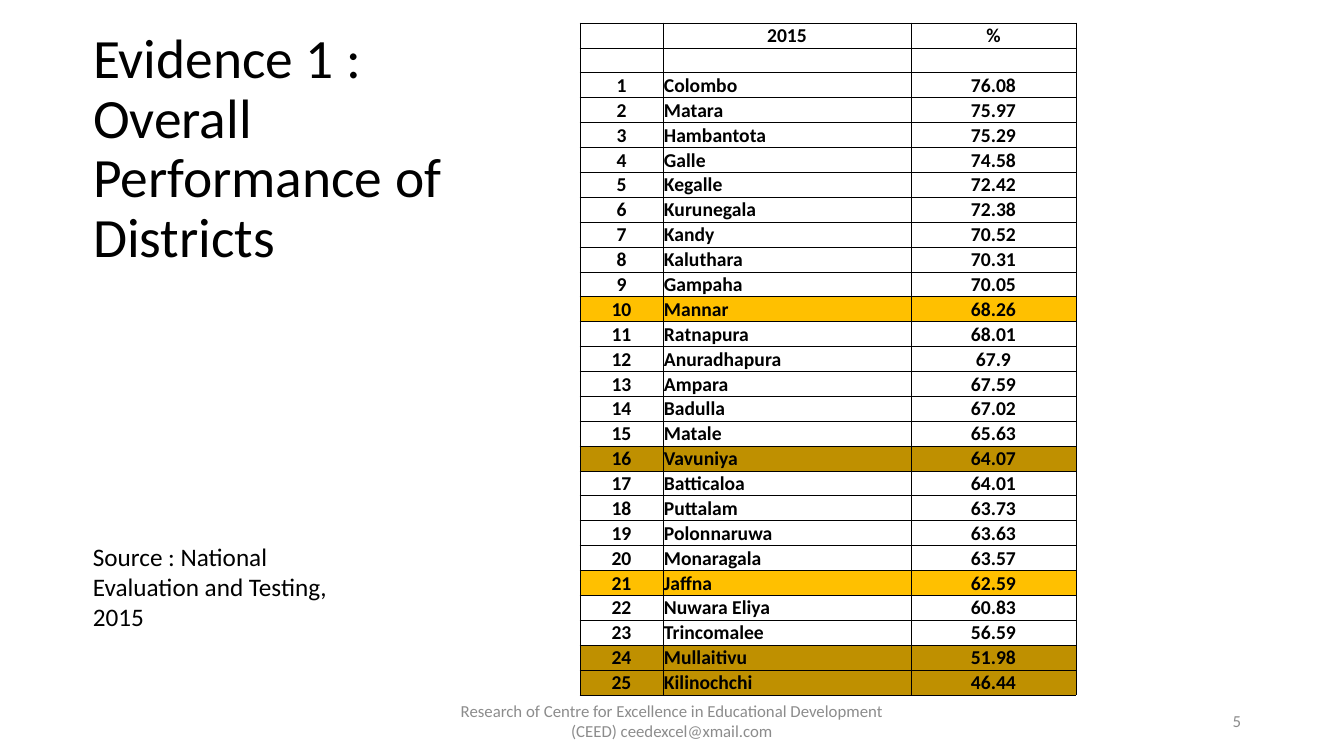
from lxml import etree
from pptx import Presentation
from pptx import util as u
from pptx.dml.color import RGBColor
from pptx.enum import text
from pptx.oxml import ns

BLACK = RGBColor(0x00, 0x00, 0x00)
WHITE = RGBColor(0xFF, 0xFF, 0xFF)
GRAY = RGBColor(0x8C, 0x8C, 0x8C)
AMBER = RGBColor(0xFF, 0xC0, 0x00)
DARK_GOLD = RGBColor(0xBF, 0x90, 0x00)

FONT = "Calibri"
EMU_PER_PX = 914400 / 100.8
LEFT, CENTER, RIGHT = text.PP_ALIGN.LEFT, text.PP_ALIGN.CENTER, text.PP_ALIGN.RIGHT
TOP, MIDDLE, BOTTOM = text.MSO_ANCHOR.TOP, text.MSO_ANCHOR.MIDDLE, text.MSO_ANCHOR.BOTTOM

COLUMN_WIDTHS = (83, 248, 165)
COLUMN_ALIGNS = (CENTER, LEFT, CENTER)
TABLE_HEIGHT = 670
CELL_SIZE = 14
DISTRICTS = [
    ("Colombo", "76.08"), ("Matara", "75.97"), ("Hambantota", "75.29"),
    ("Galle", "74.58"), ("Kegalle", "72.42"), ("Kurunegala", "72.38"),
    ("Kandy", "70.52"), ("Kaluthara", "70.31"), ("Gampaha", "70.05"),
    ("Mannar", "68.26"), ("Ratnapura", "68.01"), ("Anuradhapura", "67.9"),
    ("Ampara", "67.59"), ("Badulla", "67.02"), ("Matale", "65.63"),
    ("Vavuniya", "64.07"), ("Batticaloa", "64.01"), ("Puttalam", "63.73"),
    ("Polonnaruwa", "63.63"), ("Monaragala", "63.57"), ("Jaffna", "62.59"),
    ("Nuwara Eliya", "60.83"), ("Trincomalee", "56.59"),
    ("Mullaitivu", "51.98"), ("Kilinochchi", "46.44"),
]
HIGHLIGHTS = {
    "Mannar": AMBER, "Jaffna": AMBER,
    "Vavuniya": DARK_GOLD, "Mullaitivu": DARK_GOLD, "Kilinochchi": DARK_GOLD,
}


def px(length):
    return u.Emu(round(length * EMU_PER_PX))


def write_text(frame, words, size, color=BLACK, bold=False, align=LEFT, spacing=None):
    paragraph = frame.paragraphs[0]
    paragraph.alignment = align
    paragraph.line_spacing = spacing
    run = paragraph.add_run()
    run.text = words
    run.font.name = FONT
    run.font.size = u.Pt(size)
    run.font.bold = bold
    run.font.color.rgb = color


def add_title(slide, words, left, top, width, height):
    title = slide.shapes.title
    title.left, title.top, title.width, title.height = map(px, (left, top, width, height))
    frame = title.text_frame
    frame.auto_size = text.MSO_AUTO_SIZE.NONE
    frame.word_wrap = True
    frame.vertical_anchor = MIDDLE
    write_text(frame, words, 39.6, spacing=0.9)


def add_text_box(slide, words, left, top, width, height, anchor=MIDDLE, **text_format):
    box = slide.shapes.add_textbox(*map(px, (left, top, width, height)))
    box.text_frame.word_wrap = True
    box.text_frame.vertical_anchor = anchor
    write_text(box.text_frame, words, **text_format)


def add_borders(cell):
    properties = cell._tc.get_or_add_tcPr()
    for position, side in enumerate(("lnL", "lnR", "lnT", "lnB")):
        line = etree.Element(ns.qn(f"a:{side}"), w=str(u.Pt(0.5)))
        fill = etree.SubElement(line, ns.qn("a:solidFill"))
        etree.SubElement(fill, ns.qn("a:srgbClr"), val=str(BLACK))
        properties.insert(position, line)


def format_cell(cell, words, align, fill):
    cell.margin_left = cell.margin_right = cell.margin_top = u.Inches(0.01)
    cell.margin_bottom = 0
    cell.vertical_anchor = BOTTOM
    cell.fill.solid()
    cell.fill.fore_color.rgb = fill
    add_borders(cell)
    if words:
        write_text(cell.text_frame, words, CELL_SIZE, bold=True, align=align)
    else:
        # An empty cell takes its height from the end-of-paragraph size.
        end = etree.SubElement(cell.text_frame.paragraphs[0]._p, ns.qn("a:endParaRPr"))
        end.set("sz", str(CELL_SIZE * 100))


def add_district_table(slide, left, top):
    rows = [("", "2015", "%"), ("", "", "")]
    rows += [(str(rank), *district) for rank, district in enumerate(DISTRICTS, 1)]
    frame = slide.shapes.add_table(
        len(rows), len(COLUMN_WIDTHS),
        *map(px, (left, top, sum(COLUMN_WIDTHS), TABLE_HEIGHT)))
    table = frame.table
    table.first_row = table.horz_banding = False
    for column, width in zip(table.columns, COLUMN_WIDTHS):
        column.width = px(width)
    for row_index, (row, values) in enumerate(zip(table.rows, rows)):
        row.height = px(TABLE_HEIGHT / len(rows))
        fill = HIGHLIGHTS.get(values[1], WHITE)
        for cell, words, align in zip(row.cells, values, COLUMN_ALIGNS):
            format_cell(cell, words, CENTER if row_index == 0 else align, fill)


def main():
    presentation = Presentation()
    presentation.slide_width, presentation.slide_height = px(1344), px(756)
    slide = presentation.slides.add_slide(presentation.slide_layouts[5])
    add_title(slide, "Evidence 1 : Overall Performance of Districts", 83, 77, 375, 146)
    add_district_table(slide, 580, 23)
    add_text_box(
        slide,
        "Research of Centre for Excellence in Educational Development (CEED) ceedexcel@xmail.com",
        445, 701, 454, 40, size=12, color=GRAY, align=CENTER)
    add_text_box(slide, "5", 949, 701, 302, 40, size=12, color=GRAY, align=RIGHT)
    add_text_box(slide, "Source : National Evaluation and Testing, 2015",
                 83, 536, 276, 102, anchor=TOP, size=18)
    presentation.save("out.pptx")


if __name__ == "__main__":
    main()
